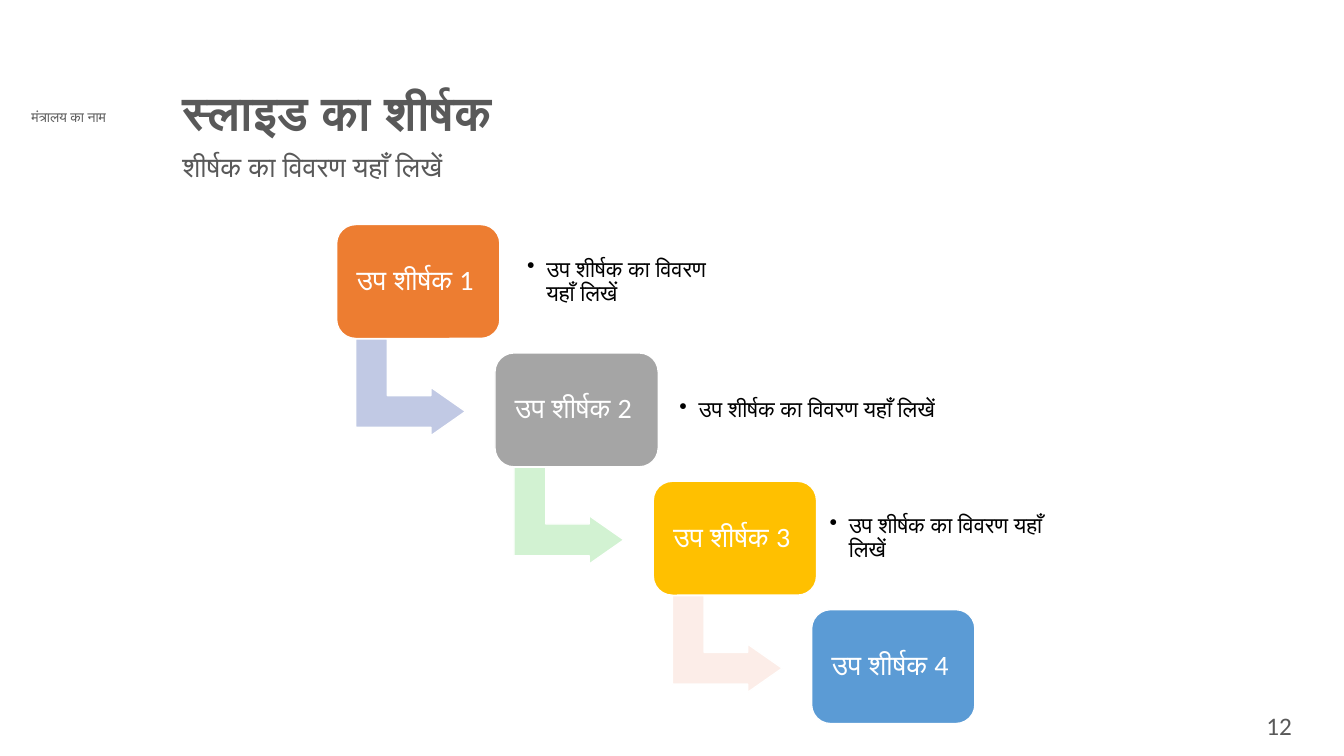
from dataclasses import dataclass

from lxml.etree import SubElement
from pptx import Presentation
from pptx.dml.color import RGBColor
from pptx.enum.shapes import MSO_SHAPE
from pptx.enum.text import MSO_ANCHOR, PP_ALIGN
from pptx.oxml.ns import qn
from pptx.shapes.autoshape import Shape
from pptx.slide import Slide
from pptx.util import Inches, Pt

WIDTH, HEIGHT = Inches(13.33), Inches(7.5)
COLORS = {
    "white": "FFFFFF", "black": "000000", "text": "595959",
    "orange": "ED7D31", "grey": "A5A5A5", "gold": "FFC000", "blue": "5B9BD5",
    "lavender": "C1C9E4", "mint": "D2F2D2", "blush": "FCEDE8",
}


@dataclass(frozen=True)
class Box:
    """Position and size in percent of the slide's width and height."""
    left: float
    top: float
    width: float
    height: float

    def emu(self) -> tuple[int, int, int, int]:
        return (int(WIDTH * self.left / 100), int(HEIGHT * self.top / 100),
                int(WIDTH * self.width / 100), int(HEIGHT * self.height / 100))


@dataclass(frozen=True)
class Style:
    size: float
    color: str = "text"
    font: str = "Calibri"
    bold: bool = False
    align: PP_ALIGN = PP_ALIGN.LEFT
    spacing: float = 0.9
    anchor: MSO_ANCHOR = MSO_ANCHOR.TOP
    inset: float | None = None
    bullet: bool = False


@dataclass(frozen=True)
class Caption:
    text: str
    box: Box
    style: Style


@dataclass(frozen=True)
class Step:
    label: str
    fill: str
    arrow: str = ""
    detail_offset: float = 0
    detail_width: float = 0


DETAIL = "उप शीर्षक का विवरण यहाँ लिखें"
CAPTIONS = [
    Caption("मंत्रालय का नाम", Box(0.23, 13.73, 9.75, 3.6),
            Style(10, font="Lato", align=PP_ALIGN.CENTER, spacing=1)),
    Caption("स्लाइड का शीर्षक", Box(12.83, 11.2, 72.08, 7.33), Style(34, bold=True)),
    Caption("शीर्षक का विवरण यहाँ लिखें", Box(12.83, 19.6, 72.08, 8.4), Style(20)),
    Caption("12", Box(90.75, 93.33, 8.85, 6),
            Style(18, align=PP_ALIGN.CENTER, spacing=1)),
]
STEPS = [
    Step("उप शीर्षक 1 ", "orange", "lavender", 13.5, 15.98),
    Step("उप शीर्षक 2 ", "grey", "mint", 13.05, 23.55),
    Step("उप शीर्षक 3 ", "gold", "blush", 12.44, 19.65),
    Step("उप शीर्षक 4 ", "blue"),
]
FIRST_LEFT, FIRST_TOP = 25.05, 29.7
COLUMN, ROW = 11.78, 16.98
LABEL_STYLE = Style(20, "white", align=PP_ALIGN.CENTER,
                    anchor=MSO_ANCHOR.MIDDLE, inset=0.08)
DETAIL_STYLE = Style(16, "black", anchor=MSO_ANCHOR.MIDDLE, inset=0.09, bullet=True)


def rgb(name: str) -> RGBColor:
    return RGBColor.from_string(COLORS[name])


def write(shape: Shape, text: str, style: Style) -> None:
    frame = shape.text_frame
    frame.text = text
    frame.word_wrap = True
    frame.vertical_anchor = style.anchor
    if style.inset is not None:
        frame.margin_left = frame.margin_right = Inches(style.inset)
        frame.margin_top = frame.margin_bottom = Inches(style.inset)
    paragraph = frame.paragraphs[0]
    paragraph.alignment = style.align
    paragraph.line_spacing = style.spacing
    if style.bullet:
        properties = paragraph._p.get_or_add_pPr()
        properties.set("marL", str(Inches(0.19)))
        properties.set("indent", str(-Inches(0.19)))
        SubElement(properties, qn("a:buChar"), char="•")
    font = paragraph.runs[0].font
    font.name, font.size, font.bold = style.font, Pt(style.size), style.bold
    font.color.rgb = rgb(style.color)


def add_caption(slide: Slide, caption: Caption) -> None:
    write(slide.shapes.add_textbox(*caption.box.emu()), caption.text, caption.style)


def add_filled(slide: Slide, kind: MSO_SHAPE, box: Box, fill: str,
               adjustments: list[float]) -> Shape:
    shape = slide.shapes.add_shape(kind, *box.emu())
    shape.shadow.inherit = False
    shape.fill.solid()
    shape.fill.fore_color.rgb = rgb(fill)
    shape.line.color.rgb = rgb("white")
    shape.line.width = Pt(1)
    for index, value in enumerate(adjustments):
        shape.adjustments[index] = value
    return shape


def add_step(slide: Slide, index: int, step: Step) -> None:
    left, top = FIRST_LEFT + index * COLUMN, FIRST_TOP + index * ROW
    if step.arrow:
        arrow = add_filled(slide, MSO_SHAPE.BENT_UP_ARROW,
                           Box(left + 1.9, top + 14.27, 7.2, 14.53),
                           step.arrow, [0.328, 0.25, 0.358])
        arrow.rotation = 90
    card = add_filled(slide, MSO_SHAPE.ROUNDED_RECTANGLE,
                      Box(left, top, 12.15, 15.07), step.fill, [0.167])
    write(card, step.label, LABEL_STYLE)
    if step.detail_width:
        box = Box(left + step.detail_offset, top + 1.45, step.detail_width, 12.27)
        add_caption(slide, Caption(DETAIL, box, DETAIL_STYLE))


def main() -> None:
    presentation = Presentation()
    presentation.slide_width, presentation.slide_height = WIDTH, HEIGHT
    slide = presentation.slides.add_slide(presentation.slide_layouts[6])
    for caption in CAPTIONS:
        add_caption(slide, caption)
    for index, step in enumerate(STEPS):
        add_step(slide, index, step)
    presentation.save("out.pptx")


if __name__ == "__main__":
    main()
